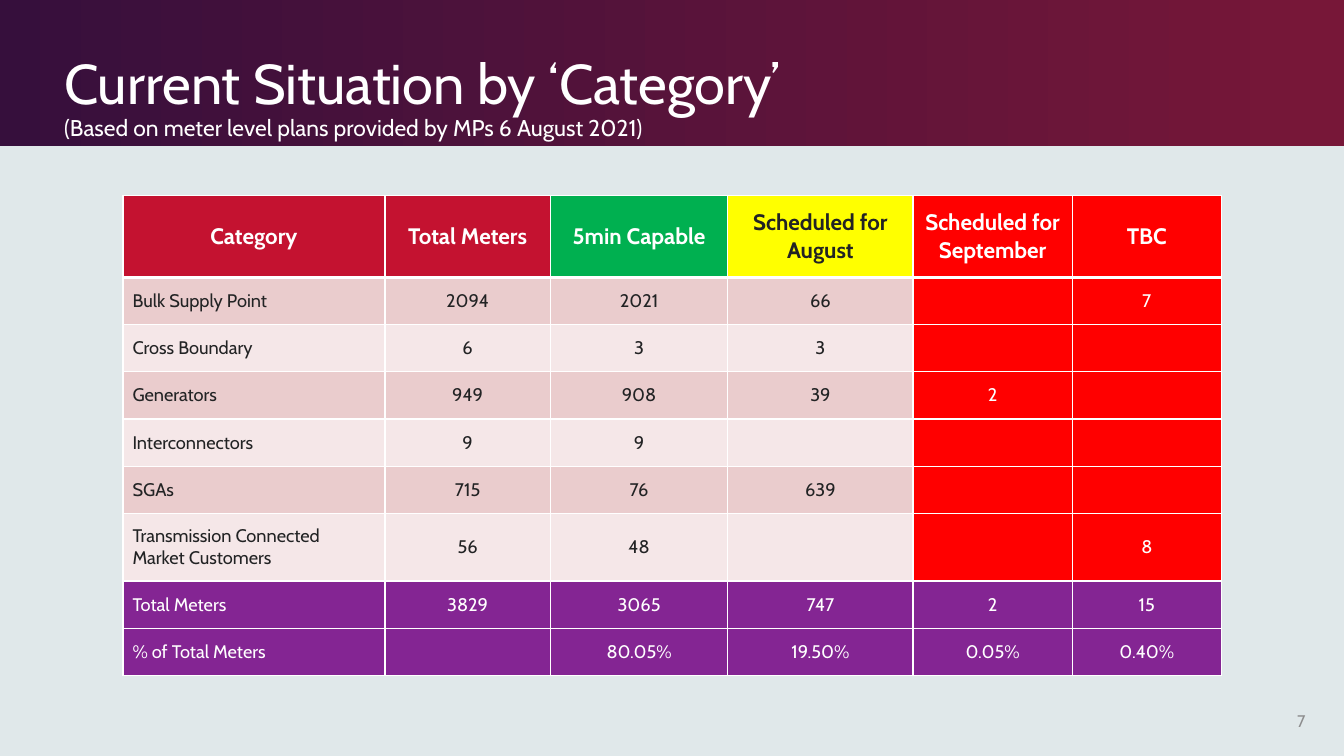
import pptx
import pptx.util
import pptx.dml.color
import pptx.enum.shapes
import pptx.enum.text
import pptx.oxml
import pptx.oxml.ns

Cm, Pt = pptx.util.Cm, pptx.util.Pt
ANCHOR, ALIGN = pptx.enum.text.MSO_ANCHOR, pptx.enum.text.PP_ALIGN
COLOURS = {
    "background": "E0E8EA", "band_left": "360F3C", "band_right": "771738",
    "white": "FFFFFF", "dark": "222324", "grey": "8D8D8E",
    "crimson": "C41230", "green": "00B050", "yellow": "FFFF00", "red": "FF0000",
    "pink": "EACCCD", "pale_pink": "F5E7E8", "purple": "842593",
}


def rgb(name):
    return pptx.dml.color.RGBColor.from_string(COLOURS[name])


def style(run, size, colour, bold=False):
    run.font.name = "Cabin"
    run.font.size = Pt(size)
    run.font.bold = bold
    run.font.color.rgb = rgb(colour)


deck = pptx.Presentation()
deck.slide_width, deck.slide_height = Cm(33.87), Cm(19.05)
slide = deck.slides.add_slide(deck.slide_layouts[6])
slide.background.fill.solid()
slide.background.fill.fore_color.rgb = rgb("background")

# Header band
band = slide.shapes.add_shape(pptx.enum.shapes.MSO_SHAPE.RECTANGLE,
                              0, 0, deck.slide_width, Cm(3.68))
band.shadow.inherit = False
band.line.fill.background()
band.fill.gradient()
band.fill.gradient_angle = 0
for stop, colour, position in zip(band.fill.gradient_stops,
                                  ("band_left", "band_right"), (0, 0.99)):
    stop.color.rgb = rgb(colour)
    stop.position = position

# Title and subtitle
title = slide.shapes.add_textbox(Cm(1.37), Cm(0.38), Cm(22.78), Cm(3.3)).text_frame
title.word_wrap = True
title.vertical_anchor = ANCHOR.BOTTOM
heading = title.paragraphs[0]
heading.text = ("Current Situation by ‘Category’\v"
                "(Based on meter level plans provided by MPs 6 August 2021)")
heading.line_spacing = 0.9
for run, size in zip(heading.runs, (40, 16.3)):
    style(run, size, "white")

# Meter table
meters = [
    ["Category", "Total Meters", "5min Capable", "Scheduled for August",
     "Scheduled for September", "TBC"],
    ["Bulk Supply Point", "2094", "2021", "66", "", "7"],
    ["Cross Boundary", "6", "3", "3", "", ""],
    ["Generators", "949", "908", "39", "2", ""],
    ["Interconnectors", "9", "9", "", "", ""],
    ["SGAs", "715", "76", "639", "", ""],
    ["Transmission Connected Market Customers", "56", "48", "", "", "8"],
    ["Total Meters", "3829", "3065", "747", "2", "15"],
    ["% of Total Meters", "", "80.05%", "19.50%", "0.05%", "0.40%"],
]
header_fills = ["crimson", "crimson", "green", "yellow", "red", "red"]
widths = [6.6, 4.17, 4.47, 4.67, 4.01, 3.76]
heights = [2.06] + [1.19] * 5 + [1.7] + [1.19] * 2
first_total, first_late = 7, 4

table = slide.shapes.add_table(len(meters), len(widths), Cm(3.1), Cm(4.93),
                               Cm(sum(widths)), Cm(sum(heights))).table
for column, width in zip(table.columns, widths):
    column.width = Cm(width)
for row, height in zip(table.rows, heights):
    row.height = Cm(height)

for r, values in enumerate(meters):
    for c, value in enumerate(values):
        if r == 0:
            fill = header_fills[c]
        elif r >= first_total:
            fill = "purple"
        elif c >= first_late:
            fill = "red"
        else:
            fill = "pink" if r % 2 else "pale_pink"
        ink = "dark" if fill in ("yellow", "pink", "pale_pink") else "white"

        cell = table.cell(r, c)
        cell.fill.solid()
        cell.fill.fore_color.rgb = rgb(fill)
        cell.vertical_anchor = ANCHOR.MIDDLE
        cell.margin_left = cell.margin_right = Cm(0.24)
        cell.text = value
        entry = cell.text_frame.paragraphs[0]
        entry.alignment = ALIGN.LEFT if c == 0 and r > 0 else ALIGN.CENTER
        for run in entry.runs:
            style(run, 16 if r == 0 else 13, ink, bold=r == 0)

        # White cell borders, heavier under the header
        for i, side in enumerate("LRTB"):
            heavy = (r, side) in ((0, "B"), (1, "T"))
            border = pptx.oxml.parse_xml(
                f'<a:ln{side} {pptx.oxml.ns.nsdecls("a")} w="{Pt(3 if heavy else 1)}">'
                f'<a:solidFill><a:srgbClr val="{COLOURS["white"]}"/></a:solidFill>'
                f'</a:ln{side}>')
            cell._tc.get_or_add_tcPr().insert(i, border)

# Page number
page = slide.shapes.add_textbox(Cm(31.55), Cm(17.65), Cm(1.6), Cm(1.02)).text_frame
page.word_wrap = True
page.vertical_anchor = ANCHOR.MIDDLE
page.text = "7"
page.paragraphs[0].alignment = ALIGN.RIGHT
style(page.paragraphs[0].runs[0], 12, "grey")

deck.save("out.pptx")
